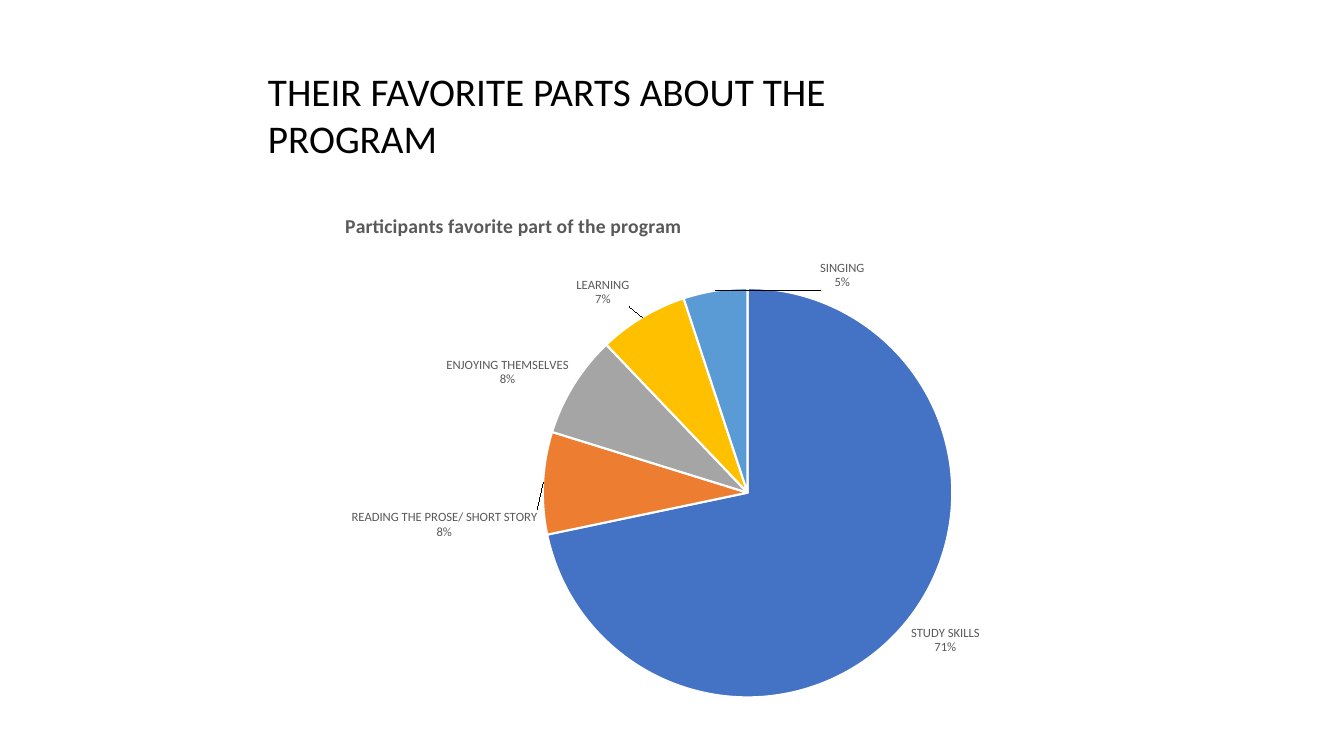
from copy import deepcopy

from pptx import Presentation
from pptx.chart.data import CategoryChartData
from pptx.dml.color import RGBColor
from pptx.enum.chart import XL_CHART_TYPE, XL_LABEL_POSITION
from pptx.enum.text import MSO_AUTO_SIZE
from pptx.oxml import parse_xml
from pptx.oxml.ns import nsdecls, qn
from pptx.util import Inches, Pt

# Content
HEADING = "THEIR FAVORITE PARTS ABOUT THE PROGRAM"
CHART_TITLE = "Participants favorite part of the program"
# name, percent, slice colour, label shift (fractions of the chart)
SLICES = [
    ("STUDY SKILLS", 71, "4472C4", None),
    ("READING THE PROSE/ SHORT STORY", 8, "ED7D31", (0, 0.08)),
    ("ENJOYING THEMSELVES", 8, "A5A5A5", (0, 0.01)),
    ("LEARNING", 7, "FFC000", (-0.01, -0.01)),
    ("SINGING", 5, "5B9BD5", (0.15, 0.01)),
]
HEADING_BOX = (2.56, 0.62, 6.87, 1.04)
CHART_BOX = (1.75, 1.89, 9.93, 5.18)
TITLE_AT = (3.39, 2.07)
PIE_BOX = (5.38, 2.86, 4.06, 4.06)

THEME = {
    "font": "Calibri", "ink": "000000", "muted": "595959", "edge": "FFFFFF",
    "heading": 28, "chart_title": 14, "chart": 10, "label": 9, "edge_width": 1.5,
}


def style(font, size, color, bold=False):
    font.name, font.size, font.bold = THEME["font"], Pt(THEME[size]), bold
    font.color.rgb = RGBColor.from_string(THEME[color])


def put_text(tf, text, **fmt):
    r = tf.paragraphs[0].add_run()
    r.text = text
    style(r.font, **fmt)


def layout(x, y, w=None, h=None, target=None, edge=True):
    tags = [("layoutTarget", target)]
    tags += [(m, "edge") for m in ("xMode", "yMode") if edge]
    tags += [("x", x), ("y", y), ("w", w), ("h", h)]
    inner = "".join(f'<c:{t} val="{v}"/>' for t, v in tags if v is not None)
    return parse_xml(f'<c:layout {nsdecls("c")}><c:manualLayout>{inner}'
                     '</c:manualLayout></c:layout>')


def in_chart(left, top, *size):
    cx, cy, cw, ch = CHART_BOX
    parts = [(left - cx) / cw, (top - cy) / ch]
    parts += [length / full for length, full in zip(size, (cw, ch))]
    return [round(part, 3) for part in parts]


def set_layout(parent, new, before):
    for old in parent.findall(qn("c:layout")):
        parent.remove(old)
    before.addprevious(new)


prs = Presentation()
prs.slide_width, prs.slide_height = Inches(13.33), Inches(7.5)
s = prs.slides.add_slide(prs.slide_layouts[6])

# Heading
tf = s.shapes.add_textbox(*map(Inches, HEADING_BOX)).text_frame
tf.word_wrap = True
tf.auto_size = MSO_AUTO_SIZE.SHAPE_TO_FIT_TEXT
put_text(tf, HEADING, size="heading", color="ink")

# Pie chart
data = CategoryChartData()
data.categories = [name for name, *_ in SLICES]
data.add_series("Series 1", [value for _, value, *_ in SLICES])
chart = s.shapes.add_chart(XL_CHART_TYPE.PIE, *map(Inches, CHART_BOX), data).chart
style(chart.font, "chart", "ink")
chart.has_legend = False
plot = chart.plots[0]
plot.vary_by_categories = True
pie = plot.series[0]
for i, (_, _, color, _) in enumerate(SLICES):
    fmt = pie.points[i].format
    fmt.fill.solid()
    fmt.fill.fore_color.rgb = RGBColor.from_string(color)
    fmt.line.color.rgb = RGBColor.from_string(THEME["edge"])
    fmt.line.width = Pt(THEME["edge_width"])

# Chart title and pie placement
chart.has_title = True
title = chart.chart_title
put_text(title.text_frame, CHART_TITLE, size="chart_title", color="muted", bold=True)
title.include_in_layout = False
title_xml = title.text_frame._txBody.getparent().getparent()
set_layout(title_xml, layout(*in_chart(*TITLE_AT)), title_xml.find(qn("c:overlay")))
area = chart._chartSpace.chart.plotArea
set_layout(area, layout(*in_chart(*PIE_BOX), target="inner"), area.find(qn("c:pieChart")))

# Slice labels
labels = pie.data_labels
style(labels.font, "label", "muted")
labels.number_format, labels.number_format_is_linked = '0"%"', False
labels.position = XL_LABEL_POSITION.OUTSIDE_END
labels.show_category_name = labels.show_value = True
labels.show_percentage = False
labels_xml = labels._element
separator = parse_xml(f'<c:separator {nsdecls("c")}>\n</c:separator>')
last_flag = labels_xml.find(qn("c:showBubbleSize"))
if last_flag is None:
    last_flag = labels_xml.find(qn("c:showPercent"))
last_flag.addnext(separator)

# Shifted labels share the series format
shared = [e for e in labels_xml if e.tag != qn("c:showLeaderLines")]
first = labels_xml[0]
for i, (*_, shift) in enumerate(SLICES):
    if shift:
        label = parse_xml(f'<c:dLbl {nsdecls("c")}><c:idx val="{i}"/></c:dLbl>')
        label.append(layout(*shift, edge=False))
        label.extend([deepcopy(e) for e in shared])
        first.addprevious(label)

prs.save("out.pptx")
